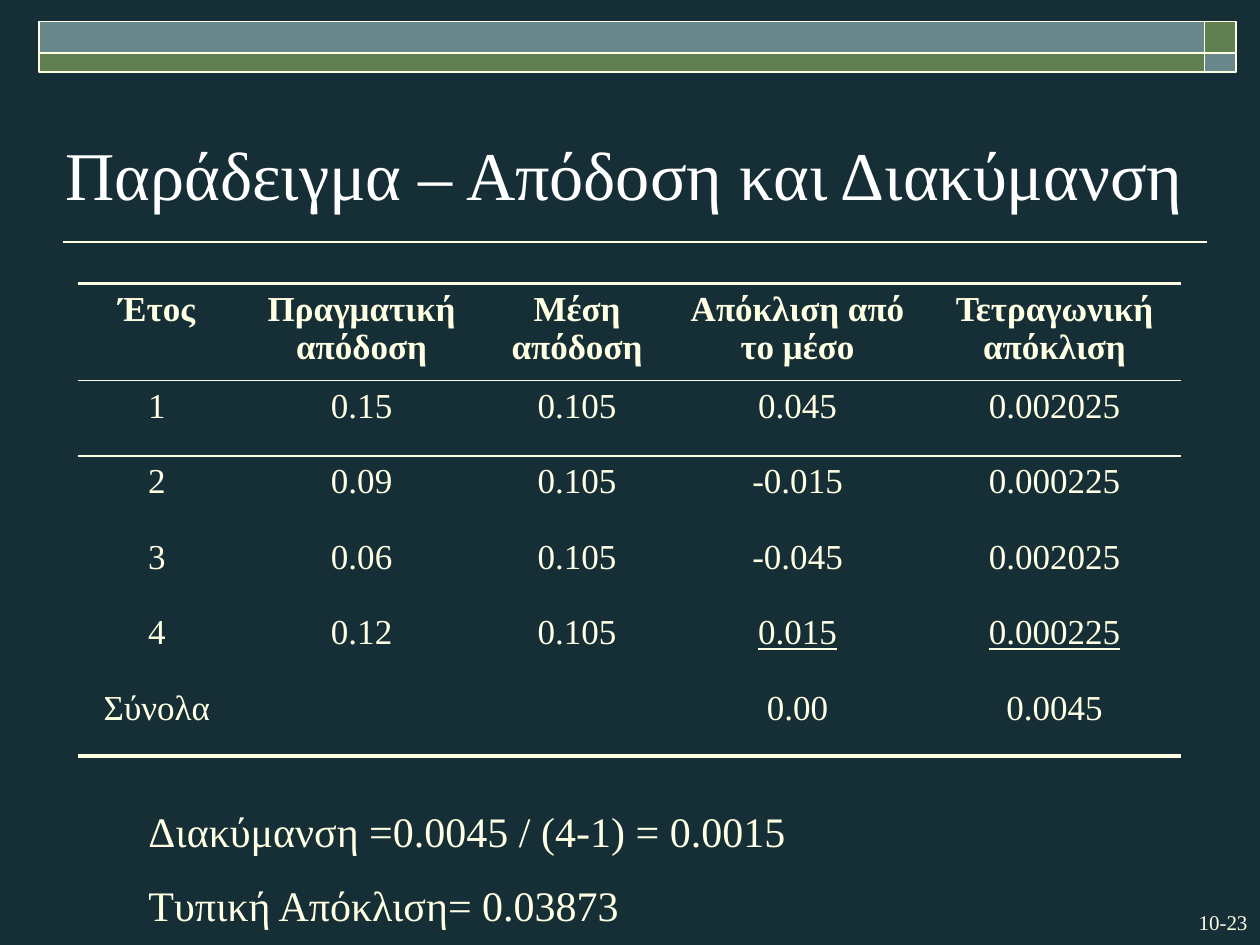
import pptx
import pptx.dml.color
import pptx.enum.shapes
import pptx.enum.text
import pptx.oxml.ns
import pptx.util
from lxml import etree
from pptx.util import Inches

RGBColor = pptx.dml.color.RGBColor
ALIGN = pptx.enum.text.PP_ALIGN
ANCHOR = pptx.enum.text.MSO_ANCHOR

BACKGROUND = RGBColor(0x16, 0x2E, 0x36)
CREAM = RGBColor(0xFF, 0xFF, 0xE3)
WHITE = RGBColor(0xFF, 0xFF, 0xFF)
GREEN = RGBColor(0x61, 0x80, 0x52)
TEAL = RGBColor(0x69, 0x88, 0x8B)
FONT = "Times New Roman"
NO_GRID_STYLE = "{2D5ABB26-0587-4C30-8999-92F81FD0307C}"

COLUMN_WIDTHS = [1.25, 2, 1.42, 2.08, 2]
ROW_HEIGHTS = [0.77, 0.6, 0.6, 0.6, 0.6, 0.58]
ROWS = [
    ["Έτος", "Πραγματική απόδοση", "Μέση απόδοση", "Απόκλιση από το μέσο",
     "Τετραγωνική απόκλιση"],
    ["1", "0.15", "0.105", "0.045", "0.002025"],
    ["2", "0.09", "0.105", "-0.015", "0.000225"],
    ["3", "0.06", "0.105", "-0.045", "0.002025"],
    ["4", "0.12", "0.105", "0.015", "0.000225"],
    ["Σύνολα", "", "", "0.00", "0.0045"],
]
RESULTS = ["Διακύμανση =0.0045 / (4-1) = 0.0015", "Τυπική Απόκλιση= 0.03873"]


def add_run(paragraph, text, size, color=CREAM):
    run = paragraph.add_run()
    run.text = text
    run.font.name = FONT
    run.font.size = pptx.util.Pt(size)
    run.font.color.rgb = color
    return run


def add_text(slide, box, lines, size, color=CREAM, align=ALIGN.LEFT,
             anchor=ANCHOR.TOP, space_before=0):
    frame = slide.shapes.add_textbox(*map(Inches, box)).text_frame
    frame.word_wrap = True
    frame.vertical_anchor = anchor
    for index, line in enumerate(lines):
        paragraph = frame.add_paragraph() if index else frame.paragraphs[0]
        paragraph.alignment = align
        if index:
            paragraph.space_before = pptx.util.Pt(space_before)
        add_run(paragraph, line, size, color)


def add_banner(slide, left, top, width, height):
    """Two bands, each ending in a small block of the other colour."""
    end_width, upper_height = 0.25, 0.25
    columns = [(left, width - end_width), (left + width - end_width, end_width)]
    bands = [(top, upper_height, (TEAL, GREEN)),
             (top + upper_height, height - upper_height, (GREEN, TEAL))]
    for y, band_height, colors in bands:
        for (x, block_width), color in zip(columns, colors):
            block = slide.shapes.add_shape(
                pptx.enum.shapes.MSO_SHAPE.RECTANGLE,
                *map(Inches, (x, y, block_width, band_height)))
            block.shadow.inherit = False
            block.fill.solid()
            block.fill.fore_color.rgb = color
            block.line.color.rgb = CREAM
            block.line.width = pptx.util.Pt(1)


def add_title_rule(slide, left, right, y):
    rule = slide.shapes.add_connector(
        pptx.enum.shapes.MSO_CONNECTOR.STRAIGHT,
        *map(Inches, (right, y, left, y)))
    rule.line.color.rgb = CREAM
    rule.line.width = pptx.util.Pt(1)
    etree.SubElement(rule._element.spPr, pptx.oxml.ns.qn("a:effectLst"))


def add_border(cell, side, points):
    qn = pptx.oxml.ns.qn
    line = etree.SubElement(cell._tc.get_or_add_tcPr(), qn("a:ln" + side),
                            w=str(pptx.util.Pt(points)))
    fill = etree.SubElement(line, qn("a:solidFill"))
    etree.SubElement(fill, qn("a:srgbClr"), val=str(CREAM))


def add_returns_table(slide, left, top):
    box = (left, top, sum(COLUMN_WIDTHS), sum(ROW_HEIGHTS))
    table = slide.shapes.add_table(
        len(ROWS), len(COLUMN_WIDTHS), *map(Inches, box)).table
    table.first_row = table.horz_banding = False
    style = table._tbl.tblPr.find(pptx.oxml.ns.qn("a:tableStyleId"))
    style.text = NO_GRID_STYLE
    for column, width in zip(table.columns, COLUMN_WIDTHS):
        column.width = Inches(width)
    for row, height in zip(table.rows, ROW_HEIGHTS):
        row.height = Inches(height)

    last = len(ROWS) - 1
    borders = {0: [("T", 2.25), ("B", 1)], 1: [("T", 1)], last: [("B", 2.25)]}
    for row_index, values in enumerate(ROWS):
        for column_index, value in enumerate(values):
            cell = table.cell(row_index, column_index)
            for side, points in borders.get(row_index, []):
                add_border(cell, side, points)
            cell.fill.background()
            if value:
                paragraph = cell.text_frame.paragraphs[0]
                paragraph.alignment = ALIGN.CENTER
                run = add_run(paragraph, value, 20)
                run.font.bold = row_index == 0
                # Underline the figures directly above the totals
                run.font.underline = row_index == last - 1 and column_index >= 3


def main():
    presentation = pptx.Presentation()
    presentation.slide_width = Inches(10)
    presentation.slide_height = Inches(7.5)
    slide = presentation.slides.add_slide(presentation.slide_layouts[6])
    slide.background.fill.solid()
    slide.background.fill.fore_color.rgb = BACKGROUND

    # Header
    add_title_rule(slide, 0.5, 9.58, 1.92)
    add_banner(slide, 0.31, 0.17, 9.5, 0.4)
    add_text(slide, (0.42, 0.75, 9.33, 1),
             ["Παράδειγμα – Απόδοση και Διακύμανση"], 39, WHITE,
             anchor=ANCHOR.BOTTOM)

    # Returns and the resulting variance
    add_returns_table(slide, 0.62, 2.25)
    add_text(slide, (1.08, 6.33, 8.92, 1.11), RESULTS, 24,
             anchor=ANCHOR.MIDDLE, space_before=13.5)

    # Page number
    add_text(slide, (9.17, 7.17, 0.83, 0.3), ["10-23"], 12, align=ALIGN.RIGHT)
    presentation.save("out.pptx")


if __name__ == "__main__":
    main()
